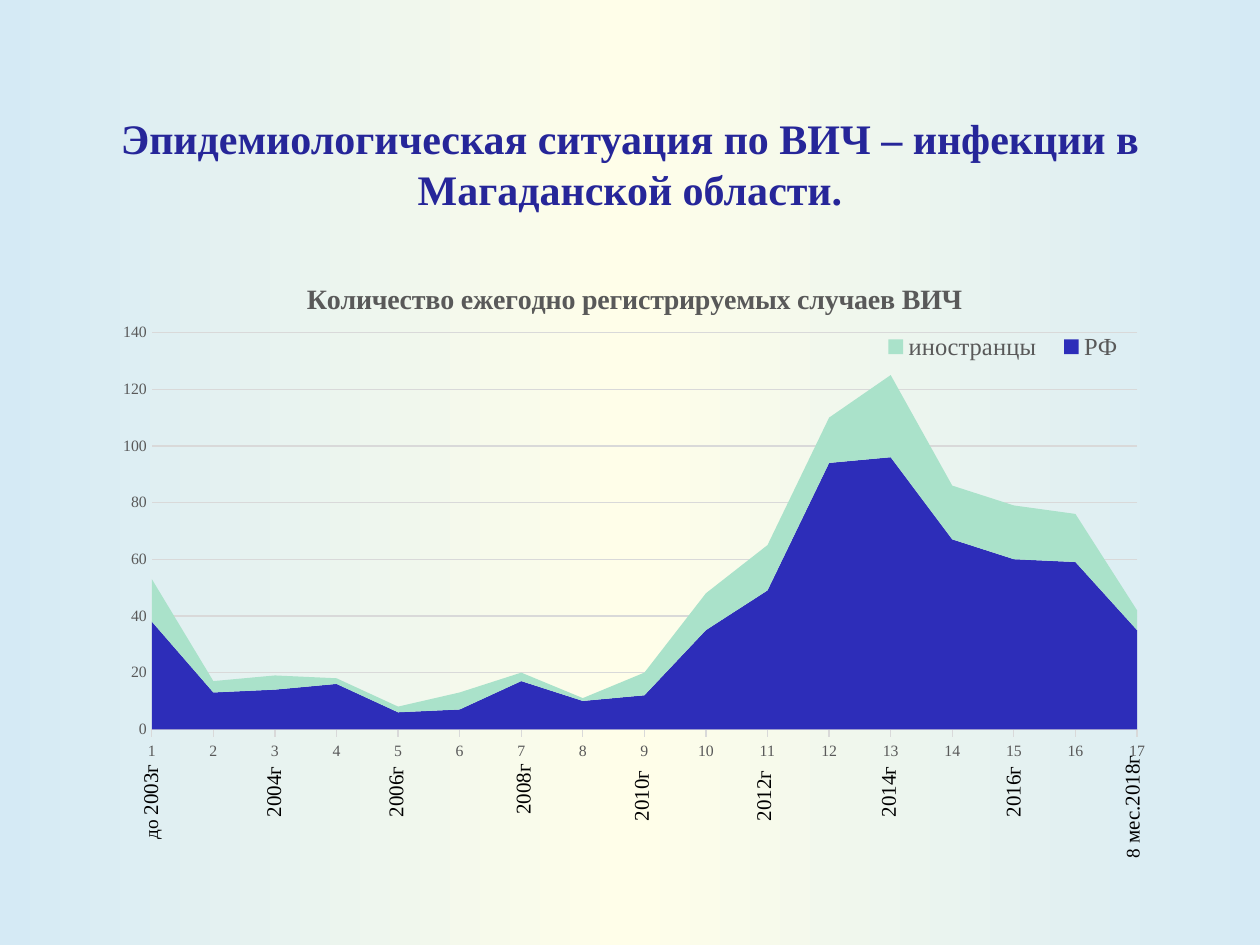
import copy
from dataclasses import dataclass

import pptx
import pptx.chart.data
import pptx.dml.color
import pptx.enum.chart
import pptx.enum.text
import pptx.oxml
import pptx.oxml.ns
import pptx.util
from pptx.util import Inches

FONT = "Times New Roman"
COLORS = {
    "edge": "D5EAF5",
    "middle": "FFFEE9",
    "title": "262699",
    "label": "000000",
    "chart text": "595959",
    "grid": "D9D9D9",
    "РФ": "2D2DB9",
    "иностранцы": "AAE2CA",
}
CASES = {
    "РФ": [38, 13, 14, 16, 6, 7, 17, 10, 12, 35, 49, 94, 96, 67, 60, 59, 35],
    "иностранцы": [15, 4, 5, 2, 2, 6, 3, 1, 8, 13, 16, 16, 29, 19, 19, 17, 7],
}


@dataclass
class YearLabel:
    text: str
    left: float
    top: float
    width: float = 0.75
    prefix: str = ""


YEAR_LABELS = [
    YearLabel("2003г", 0.7, 6.12, 0.98, "до "),
    YearLabel("2004г", 1.79, 6.06),
    YearLabel("2006г", 2.76, 6.06),
    YearLabel("2008г", 3.77, 6.04),
    YearLabel("2010г", 4.71, 6.09),
    YearLabel("2012г", 5.68, 6.09),
    YearLabel("2014г", 6.67, 6.06),
    YearLabel("2016г", 7.66, 6.06),
    YearLabel("мес.2018г", 8.46, 6.24, 1.04, "8 "),
]


def rgb(name: str) -> pptx.dml.color.RGBColor:
    return pptx.dml.color.RGBColor.from_string(COLORS[name])


def format_font(font, size: float, color: str, bold: bool = False) -> None:
    font.name = FONT
    font.size = pptx.util.Pt(size)
    font.bold = bold
    font.color.rgb = rgb(color)


def add_run(paragraph, text: str, *, size: float, color: str, bold: bool = False) -> None:
    run = paragraph.add_run()
    run.text = text
    format_font(run.font, size, color, bold)


def set_background(slide) -> None:
    fill = slide.background.fill
    fill.gradient()
    fill.gradient_angle = 0
    # Turn the two default stops into edge, middle, edge
    stop_list = slide.element.find(".//" + pptx.oxml.ns.qn("a:gsLst"))
    stop_list.append(copy.deepcopy(stop_list[0]))
    for stop, position, name in zip(
        fill.gradient_stops, (0, 0.5, 1), ("edge", "middle", "edge")
    ):
        stop.position = position
        stop.color.rgb = rgb(name)


def add_title(slide) -> None:
    shape = slide.shapes.add_textbox(Inches(0.75), Inches(0.67), Inches(8.5), Inches(1.25))
    frame = shape.text_frame
    frame.word_wrap = True
    frame.vertical_anchor = pptx.enum.text.MSO_ANCHOR.MIDDLE
    paragraph = frame.paragraphs[0]
    paragraph.alignment = pptx.enum.text.PP_ALIGN.CENTER
    add_run(
        paragraph,
        "Эпидемиологическая ситуация по ВИЧ – инфекции в Магаданской области.",
        size=24, color="title", bold=True,
    )


def add_year_label(slide, label: YearLabel) -> None:
    shape = slide.shapes.add_textbox(
        Inches(label.left), Inches(label.top), Inches(label.width), Inches(0.3)
    )
    shape.rotation = 270
    frame = shape.text_frame
    frame.word_wrap = True
    frame.auto_size = pptx.enum.text.MSO_AUTO_SIZE.SHAPE_TO_FIT_TEXT
    if label.prefix:
        add_run(frame.paragraphs[0], label.prefix, size=11, color="label")
    add_run(frame.paragraphs[0], label.text, size=12, color="label")


def set_layout(element, before: tuple[str, ...], inner: bool = False, **fractions: float) -> None:
    """Place a chart part by fractions of the chart, ahead of the named children."""
    for old in element.findall(pptx.oxml.ns.qn("c:layout")):
        element.remove(old)
    parts = '<c:layoutTarget val="inner"/>' if inner else ""
    parts += "".join(f'<c:{key}Mode val="edge"/>' for key in fractions if key in "xy")
    parts += "".join(f'<c:{key} val="{value}"/>' for key, value in fractions.items())
    layout = pptx.oxml.parse_xml(
        f'<c:layout {pptx.oxml.ns.nsdecls("c")}><c:manualLayout>{parts}</c:manualLayout></c:layout>'
    )
    tags = [pptx.oxml.ns.qn(name) for name in before]
    following = next((child for child in element if child.tag in tags), None)
    if following is None:
        element.append(layout)
    else:
        following.addprevious(layout)


def format_axes(chart) -> None:
    tick_mark = pptx.enum.chart.XL_TICK_MARK
    for axis in (chart.category_axis, chart.value_axis):
        format_font(axis.tick_labels.font, 9, "chart text")
        axis.minor_tick_mark = tick_mark.NONE
    category_axis, value_axis = chart.category_axis, chart.value_axis
    category_axis.major_tick_mark = tick_mark.OUTSIDE
    value_axis.major_tick_mark = tick_mark.NONE
    value_axis.maximum_scale = 140
    value_axis.minimum_scale = 0
    value_axis.major_unit = 20
    value_axis.has_major_gridlines = True
    value_axis.format.line.fill.background()
    for line in (category_axis.format.line, value_axis.major_gridlines.format.line):
        line.color.rgb = rgb("grid")
        line.width = pptx.util.Pt(0.75)
    # Areas start right on the value axis
    cross = chart.element.find(".//" + pptx.oxml.ns.qn("c:crossBetween"))
    cross.set("val", "midCat")


def add_cases_chart(slide) -> None:
    data = pptx.chart.data.CategoryChartData()
    data.categories = [str(number) for number in range(1, 18)]
    for name, values in CASES.items():
        data.add_series(name, values)
    chart = slide.shapes.add_chart(
        pptx.enum.chart.XL_CHART_TYPE.AREA_STACKED,
        Inches(0.78), Inches(2.01), Inches(8.5), Inches(4.5), data,
    ).chart
    format_font(chart.font, 10, "label")
    for series in chart.plots[0].series:
        series.format.fill.solid()
        series.format.fill.fore_color.rgb = rgb(series.name)
        series.format.line.fill.background()
    format_axes(chart)

    # Chart title
    chart.has_title = True
    add_run(
        chart.chart_title.text_frame.paragraphs[0],
        "Количество ежегодно регистрируемых случаев ВИЧ",
        size=16, color="chart text", bold=True,
    )
    title = chart.element.find(".//" + pptx.oxml.ns.qn("c:title"))
    set_layout(title, ("c:overlay", "c:spPr", "c:txPr"), x=0.19, y=0.04)

    # Legend over the top right corner of the plot
    chart.has_legend = True
    chart.legend.position = pptx.enum.chart.XL_LEGEND_POSITION.CORNER
    chart.legend.include_in_layout = False
    format_font(chart.legend.font, 14, "chart text")
    legend = chart.element.find(".//" + pptx.oxml.ns.qn("c:legend"))
    set_layout(legend, ("c:overlay", "c:spPr", "c:txPr"), x=0.72, y=0.13, w=0.25, h=0.07)

    plot_area = chart.element.find(".//" + pptx.oxml.ns.qn("c:plotArea"))
    set_layout(plot_area, ("c:areaChart",), inner=True, x=0.05, y=0.14, w=0.92, h=0.7)


def main() -> None:
    presentation = pptx.Presentation()
    presentation.slide_width = Inches(10)
    presentation.slide_height = Inches(7.5)
    slide = presentation.slides.add_slide(presentation.slide_layouts[6])
    set_background(slide)
    add_title(slide)
    add_cases_chart(slide)
    for label in YEAR_LABELS:
        add_year_label(slide, label)
    presentation.save("out.pptx")


if __name__ == "__main__":
    main()
